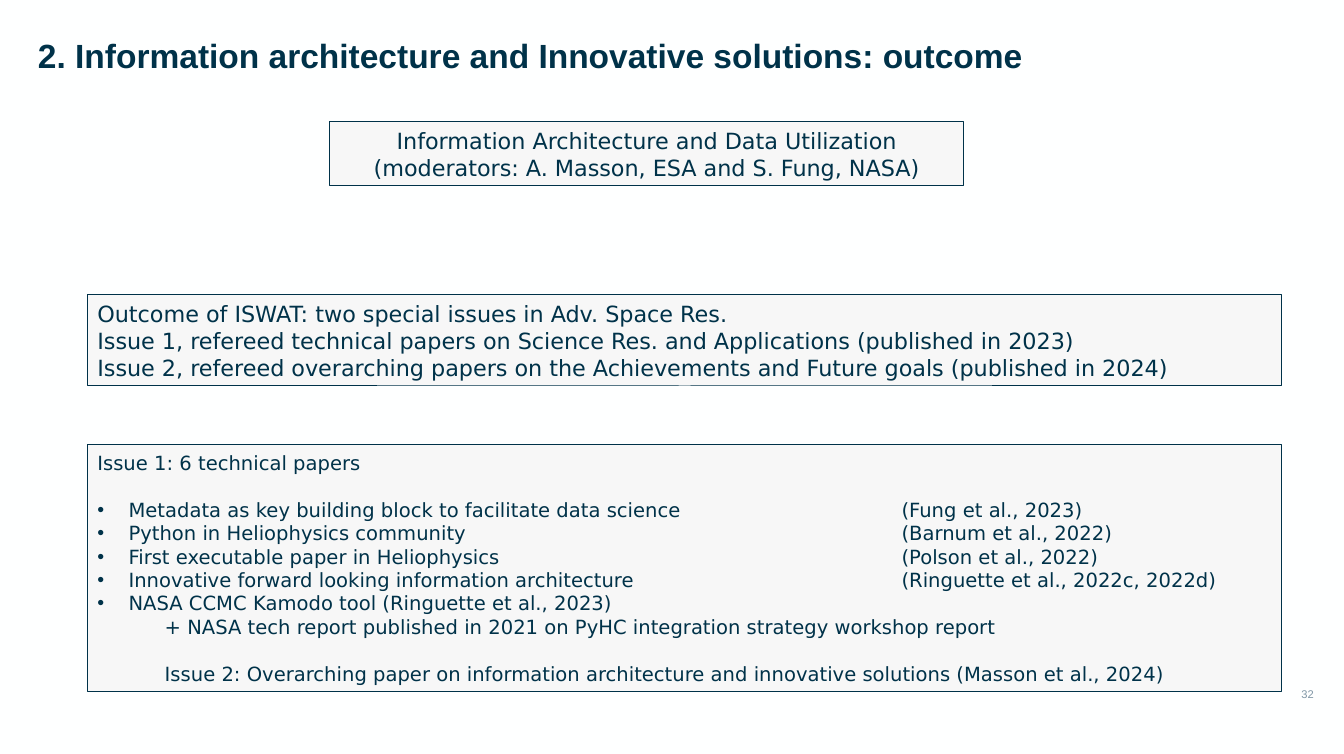
from lxml import etree
from pptx import Presentation
from pptx.dml.color import RGBColor
from pptx.enum import shapes, text
from pptx.oxml.ns import qn
from pptx.util import Inches, Pt

NAVY = RGBColor(0x00, 0x32, 0x49)
GREY = RGBColor(0x81, 0x97, 0xA6)
PANEL = RGBColor(0xF7, 0xF7, 0xF7)
PAPER = RGBColor(0xFE, 0xFF, 0xFF)
HEAD_FONT, BODY_FONT = "Arial", "DejaVu Sans"
LEFT, CENTER, RIGHT = text.PP_ALIGN.LEFT, text.PP_ALIGN.CENTER, text.PP_ALIGN.RIGHT
LINE_GAP = Pt(16.8)

SESSION = ["Information Architecture and Data Utilization "
           "(moderators: A. Masson, ESA and S. Fung, NASA)"]
OUTCOME = [
    "Outcome of ISWAT: two special issues in Adv. Space Res.",
    "Issue 1, refereed technical papers on Science Res. and Applications (published in 2023)",
    "Issue 2, refereed overarching papers on the Achievements and Future goals (published in 2024)",
]
PAPERS = [
    "Metadata as key building block to facilitate data science\t(Fung et al., 2023)",
    "Python in Heliophysics community\t(Barnum et al., 2022)",
    "First executable paper in Heliophysics\t(Polson et al., 2022)",
    "Innovative forward looking information architecture\t(Ringuette et al., 2022c, 2022d)",
    "NASA CCMC Kamodo tool (Ringuette et al., 2023)",
]
REPORT = "+ NASA tech report published in 2021 on PyHC integration strategy workshop report"
ISSUE_2 = ("Issue 2: Overarching paper on information architecture and "
           "innovative solutions (Masson et al., 2024)")


def style(p, size, font, color, align=LEFT, bold=False):
    p.alignment = align
    for r in p.runs:
        r.font.size, r.font.name, r.font.bold = Pt(size), font, bold
        r.font.color.rgb = color


def indent(p, left, hanging=0):
    pPr = p._p.get_or_add_pPr()
    pPr.set("marL", str(Inches(left)))
    pPr.set("indent", str(-Inches(hanging)))
    return pPr


def add_bullet(p):
    pPr = indent(p, 0.31, 0.31)
    etree.SubElement(pPr, qn("a:buFont"), typeface="Arial")
    etree.SubElement(pPr, qn("a:buChar"), char="•")
    tabs = etree.SubElement(pPr, qn("a:tabLst"))
    etree.SubElement(tabs, qn("a:tab"), pos=str(Inches(8)), algn="l")


def add_label(slide, box, words, size, color, align=LEFT, bold=False):
    sp = slide.shapes.add_textbox(*map(Inches, box))
    tf = sp.text_frame
    tf.word_wrap = True
    tf.vertical_anchor = text.MSO_ANCHOR.MIDDLE
    p = tf.paragraphs[0]
    p.text = words
    style(p, size, HEAD_FONT, color, align, bold)
    return sp


def add_panel(slide, box, lines, size, align=LEFT):
    sp = slide.shapes.add_shape(shapes.MSO_SHAPE.RECTANGLE, *map(Inches, box))
    sp.shadow.inherit = False
    sp.fill.solid()
    sp.fill.fore_color.rgb = PANEL
    sp.line.color.rgb = NAVY
    sp.line.width = Pt(0.75)
    tf = sp.text_frame
    tf.word_wrap = True
    tf.vertical_anchor = text.MSO_ANCHOR.MIDDLE
    for i, line in enumerate(lines):
        p = tf.add_paragraph() if i else tf.paragraphs[0]
        p.text = line
        style(p, size, BODY_FONT, NAVY, align)
    return tf.paragraphs


def add_papers(slide, box):
    paragraphs = add_panel(
        slide, box, ["Issue 1: 6 technical papers", *PAPERS, REPORT, ISSUE_2], 14)
    bullets = paragraphs[1:-2]
    # Blank-line gaps above the list and above the second issue
    for p in (bullets[0], paragraphs[-1]):
        p.space_before = LINE_GAP
    for p in bullets:
        add_bullet(p)
    for p in paragraphs[-2:]:
        indent(p, 0.67)


def main():
    prs = Presentation()
    prs.slide_width, prs.slide_height = Inches(13.37), Inches(7.5)
    slide = prs.slides.add_slide(prs.slide_layouts[6])
    slide.background.fill.solid()
    slide.background.fill.fore_color.rgb = PAPER

    # Title and page number
    add_label(slide, (0.28, 0.3, 11.34, 0.5),
              "2. Information architecture and Innovative solutions: outcome",
              24, NAVY, bold=True)
    number = add_label(slide, (8.97, 6.78, 4.1, 0.24), "32", 8, GREY, RIGHT)
    number.text_frame.margin_right = 0

    # Session, outcome and list of papers
    add_panel(slide, (3.28, 1.21, 6.31, 0.64), SESSION, 16, CENTER)
    add_panel(slide, (0.87, 2.93, 11.88, 0.91), OUTCOME, 16)
    add_papers(slide, (0.87, 4.42, 11.88, 2.46))

    prs.save("out.pptx")


if __name__ == "__main__":
    main()
